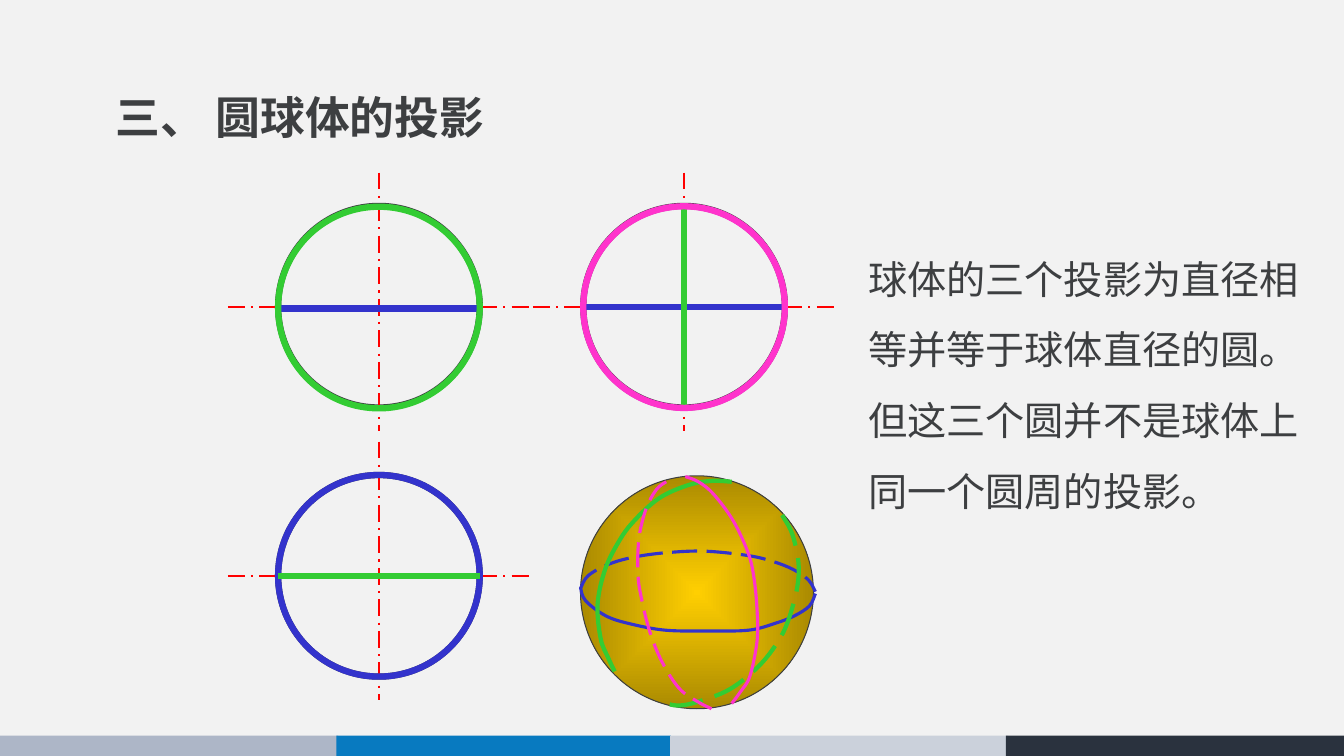
from lxml.etree import SubElement
from pptx import Presentation
from pptx.dml.color import RGBColor
from pptx.enum.dml import MSO_LINE as Dash
from pptx.enum.shapes import MSO_CONNECTOR as Link, MSO_SHAPE as Form
from pptx.enum.text import MSO_ANCHOR as Anchor, PP_ALIGN as Align
from pptx.oxml.ns import qn
from pptx.util import Cm, Pt

DARK, RED = "3D3F41", "FF0000"
BLUE, GREEN, PINK = "3333CC", "33CC33", "FF33CC"
tint = RGBColor.from_string


def paint(item, fill=None, edge=None, width=1, dash=None):
    """Fill and outline a shape or connector, without a shadow."""
    if hasattr(item, "fill"):
        if fill:
            item.fill.solid()
            item.fill.fore_color.rgb = tint(fill)
        else:
            item.fill.background()
        item.shadow.inherit = False
    else:
        SubElement(item._element.spPr, qn("a:effectLst"))
    if edge:
        item.line.color.rgb = tint(edge)
        item.line.width = Pt(width)
        if dash:
            item.line.dash_style = dash
    else:
        item.line.fill.background()


def write(item, text, size=28, font="Lato", bold=False, gap=1.0, anchor=Anchor.TOP):
    frame = item.text_frame
    frame.word_wrap = True
    frame.vertical_anchor = anchor
    para = frame.paragraphs[0]
    para.alignment = Align.LEFT
    para.line_spacing = gap
    run = para.add_run()
    run.text = text
    run.font.size = Pt(size)
    run.font.bold = bold
    run.font.name = font
    run.font.color.rgb = tint(DARK)
    SubElement(run.font._element, qn("a:ea"), typeface=font)


deck = Presentation()
deck.slide_width, deck.slide_height = Cm(33.87), Cm(19.05)
slide = deck.slides.add_slide(deck.slide_layouts[5])
slide.background.fill.solid()
slide.background.fill.fore_color.rgb = tint("0F476A")
shapes = slide.shapes

# Page panel behind everything, and footer band
panel = shapes.add_shape(Form.RECTANGLE, 0, 0, deck.slide_width, deck.slide_height)
paint(panel, fill="F2F2F2")
shapes.title._element.addprevious(panel._element)
for left, wide, color in (
    (0, 8.52, "ADB6C7"), (8.48, 8.43, "087AC0"), (16.89, 8.52, "CBD1DB"), (25.35, 8.52, "2A323E"),
):
    band = shapes.add_shape(Form.RECTANGLE, Cm(left), Cm(18.54), Cm(wide), Cm(0.52))
    paint(band, fill=color)

# Title and body
title = shapes.title
title.left, title.top, title.width, title.height = Cm(2.66), Cm(0.56), Cm(21.64), Cm(3.18)
write(title, "三、 圆球体的投影", size=32, font="Noto Sans CJK SC", bold=True, anchor=Anchor.BOTTOM)
body = shapes.add_textbox(Cm(21.63), Cm(5.71), Cm(11.51), Cm(7.44))
write(body, "球体的三个投影为直径相等并等于球体直径的圆。但这三个圆并不是球体上同一个圆周的投影。", gap=1.5)

# Sphere
ball = shapes.add_shape(Form.OVAL, Cm(14.63), Cm(11.99), Cm(5.87), Cm(5.87))
paint(ball, edge=DARK, width=0.75)
ball.fill.gradient()
for stop, color in zip(ball.fill.gradient_stops, ("FFCF01", "AA8A01")):
    stop.color.rgb = tint(color)
grad = ball._element.spPr.find(qn("a:gradFill"))
grad.remove(grad.find(qn("a:lin")))
glow = SubElement(grad, qn("a:path"))
glow.set("path", "shape")
SubElement(glow, qn("a:fillToRect"), l="50000", t="50000", r="50000", b="50000")

# Great circles on the sphere: the near half is solid, the far half dashed
arcs = [
    (BLUE, 2.25, None, [
        (14.63, 14.81), (14.76, 15.14), (15.27, 15.52), (15.88, 15.72), (16.76, 15.88), (17.81, 15.9),
        (18.87, 15.88), (19.56, 15.7), (20.02, 15.52), (20.4, 15.27), (20.55, 14.96)]),
    (BLUE, 2.25, Dash.LONG_DASH, [
        (14.63, 14.83), (14.83, 14.5), (15.39, 14.2), (16.08, 14.02), (16.89, 13.92), (17.78, 13.89),
        (18.85, 14), (19.48, 14.15), (19.99, 14.35), (20.37, 14.61), (20.55, 14.91)]),
    (GREEN, 3, None, [
        (18.44, 12.14), (17.91, 12.12), (17.3, 12.24), (16.59, 12.57), (15.95, 13.16), (15.57, 13.69),
        (15.24, 14.38), (15.06, 15.24), (15.14, 16.1), (15.32, 16.56), (15.49, 16.92)]),
    (GREEN, 3, Dash.LONG_DASH, [
        (19.71, 12.98), (19.96, 13.44), (20.12, 14.15), (20.09, 14.81), (19.86, 15.65), (19.58, 16.21),
        (19.1, 16.81), (18.39, 17.37), (17.6, 17.68), (17.09, 17.78), (16.69, 17.7)]),
    (PINK, 2.25, None, [
        (17.27, 12.01), (17.6, 12.14), (17.98, 12.45), (18.47, 13.11), (18.85, 13.92), (19, 14.55),
        (19.08, 15.37), (19.08, 16.15), (18.9, 17.04), (18.67, 17.42), (18.44, 17.73)]),
    (PINK, 2.25, Dash.LONG_DASH, [
        (16.79, 12.14), (16.54, 12.34), (16.28, 12.83), (16.1, 13.59), (16.08, 14.5), (16.18, 15.14),
        (16.38, 15.93), (16.69, 16.69), (17.12, 17.35), (17.58, 17.68), (17.93, 17.86)]),
]
for color, width, dash, knots in arcs:
    spots = [(Cm(x), Cm(y)) for x, y in knots]
    pen = shapes.build_freeform(*spots[0])
    pen.add_line_segments(spots[1:], close=False)
    arc = pen.convert_to_shape()
    paint(arc, edge=color, width=width, dash=dash)
    # Bend each straight segment into a smooth Bezier curve through the knots
    local = [(x - arc.left, y - arc.top) for x, y in spots]
    ends = [local[0], *local, local[-1]]
    legs = list(arc._element.iter(qn("a:lnTo")))
    for leg, *quad in zip(legs, ends, ends[1:], ends[2:], ends[3:]):
        bend = SubElement(leg.getparent(), qn("a:cubicBezTo"))
        axes = [(b + (c - a) / 6, c - (d - b) / 6, c) for a, b, c, d in zip(*quad)]
        for x, y in zip(*axes):
            SubElement(bend, qn("a:pt"), x=str(round(x)), y=str(round(y)))
        leg.getparent().remove(leg)

# Three views: outlines, axes, then the coloured circles and diameters
RAD = 2.54
front, side, plan = (9.55, 7.73), (17.24, 7.73), (9.55, 14.51)
marks = []
for view in (front, side, plan):
    marks += [("ring", view, DARK), ("row axis", view, RED), ("column axis", view, RED)]
marks += [
    ("ring", plan, BLUE),
    ("row", (9.6, 7.77), BLUE),
    ("row", side, BLUE),
    ("column", (17.23, 7.75), GREEN),
    ("row", plan, GREEN),
    ("ring", (9.55, 7.75), GREEN),
    ("ring", (17.24, 7.74), PINK),
]
spans = {  # offsets of both ends from the centre
    "row": (-RAD, 0, RAD, 0),
    "column": (0, -RAD, 0, RAD),
    "row axis": (-3.81, 0, 3.81, 0),
    "column axis": (0, -3.38, 0, 3.14),
}
for kind, (x, y), color in marks:
    if kind == "ring":
        ring = shapes.add_shape(Form.OVAL, Cm(x - RAD), Cm(y - RAD), Cm(2 * RAD), Cm(2 * RAD))
        paint(ring, edge=color, width=4.5)
        continue
    x1, y1, x2, y2 = spans[kind]
    line = shapes.add_connector(Link.STRAIGHT, Cm(x + x1), Cm(y + y1), Cm(x + x2), Cm(y + y2))
    if color == RED:
        paint(line, edge=color, width=1.5, dash=Dash.LONG_DASH_DOT)
    else:
        paint(line, edge=color, width=4.5)

deck.save("out.pptx")
